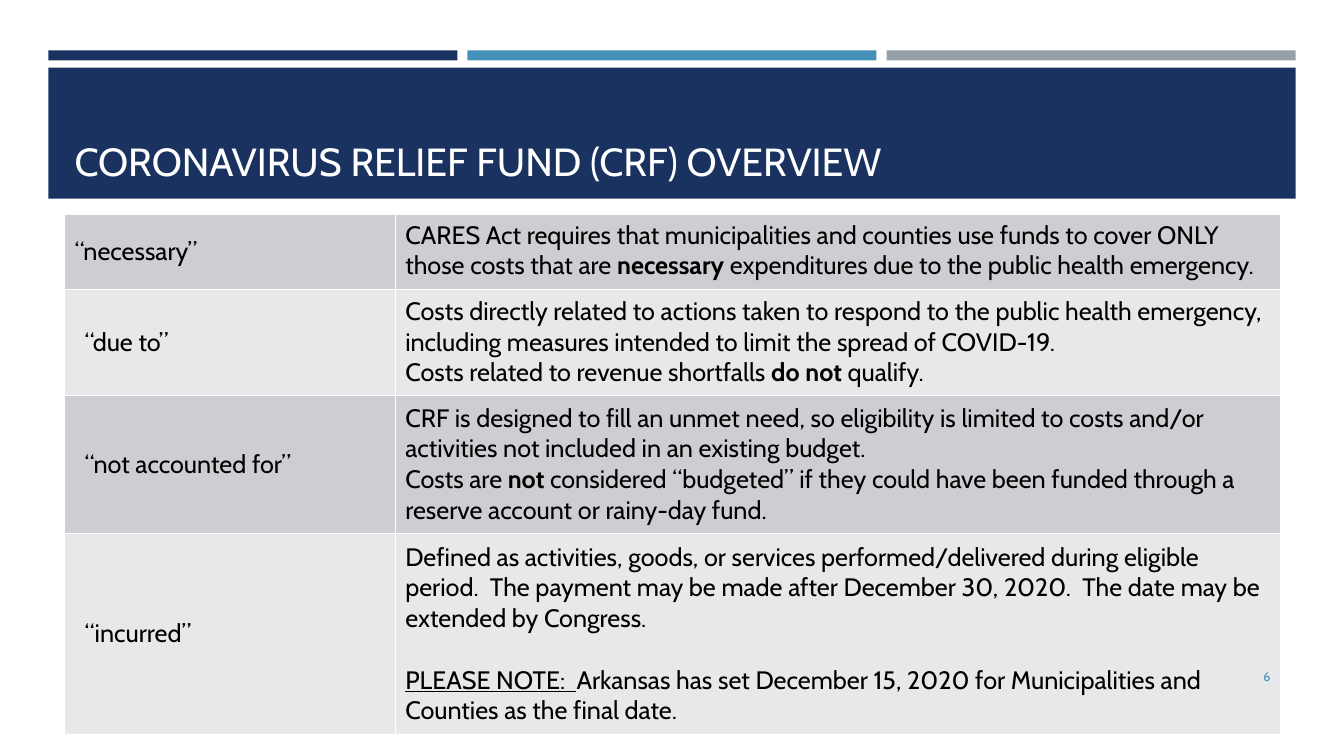
from lxml.etree import SubElement
from pptx import Presentation
from pptx.dml.color import RGBColor
from pptx.enum.shapes import MSO_SHAPE as Shape
from pptx.enum.text import MSO_ANCHOR as Anchor, MSO_AUTO_SIZE as AutoSize, PP_ALIGN as Align
from pptx.oxml.ns import qn
from pptx.util import Inches, Pt

COLORS = {"navy": "1A3260", "blue": "4590B8", "gray": "969FA7", "white": "FFFFFF",
          "black": "000000", "dark_band": "CDCED2", "light_band": "E8E8EA"}
FONT = "Cabin"
TITLE = "CORONAVIRUS RELIEF FUND (CRF) OVERVIEW"
COLUMNS = [3.28, 8.78]
ROWS = [0.74, 1.05, 1.37, 2]
TERMS = [
    ("“necessary”", [
        [("CARES Act requires that municipalities and counties use funds to cover ONLY "
          "those costs that are ", ""), ("necessary", "bold"),
         (" expenditures due to the public health emergency.", "")]]),
    ("“due to”", [
        [("Costs directly related to actions taken to respond to the public health emergency, "
          "including measures intended to limit the spread of COVID-19.", "")],
        [("Costs related to revenue shortfalls ", ""), ("do not ", "bold"), ("qualify.", "")]]),
    ("“not accounted for”", [
        [("CRF is designed to fill an unmet need, so eligibility is limited to costs and/or "
          "activities not included in an existing budget.", "")],
        [("Costs are ", ""), ("not", "bold"),
         (" considered “budgeted” if they could have been funded through a reserve account "
          "or rainy-day fund.", "")]]),
    ("“incurred”", [
        [("Defined as activities, goods, or services performed/delivered during eligible period.  "
          "The payment may be made after December 30, 2020.  The date may be extended by "
          "Congress.", "")],
        [("PLEASE NOTE:  ", "underline"),
         ("Arkansas has set December 15, 2020 for Municipalities and Counties as the final "
          "date.", "")]]),
]


def color(name):
    """Return the named colour."""
    return RGBColor.from_string(COLORS[name])


def write(frame, paragraphs, size=18, fill="black", align=Align.LEFT, gap=0):
    """Write paragraphs of (text, style) spans, with a gap in points between them."""
    frame.word_wrap = True
    for index, spans in enumerate(paragraphs):
        para = frame.add_paragraph() if index else frame.paragraphs[0]
        para.alignment = align
        para.space_before = Pt(gap if index else 0)
        for text, style in spans:
            span = para.add_run()
            span.text = text
            font = span.font
            font.name, font.size = FONT, Pt(size)
            font.bold, font.underline = style == "bold", style == "underline"
            font.color.rgb = color(fill)


def add_bar(page, box, fill):
    """Add a plain filled rectangle."""
    bar = page.shapes.add_shape(Shape.RECTANGLE, *map(Inches, box))
    bar.shadow.inherit = False
    bar.fill.solid()
    bar.fill.fore_color.rgb = color(fill)
    bar.line.fill.background()


def add_header(page, box):
    """Place three accent bars, the banner and the title in the box."""
    left, top, width, height = box
    gap, bar_height, banner_top = 0.1, 0.1, 0.17
    bar_width = (width - 2 * gap) / 3
    for index, fill in enumerate(("navy", "blue", "gray")):
        add_bar(page, (left + index * (bar_width + gap), top, bar_width, bar_height), fill)
    add_bar(page, (left, top + banner_top, width, height - banner_top), "navy")
    title = page.shapes.title
    page.shapes.element.append(title.element)
    title.left, title.top = Inches(left + 0.16), Inches(top + 0.27)
    title.width, title.height = Inches(width - 0.31), Inches(1.11)
    frame = title.text_frame
    frame.auto_size = AutoSize.NONE
    frame.vertical_anchor = Anchor.BOTTOM
    write(frame, [[(TITLE, "")]], size=28, fill="white")


def format_cell(cell, fill):
    """Give a cell white borders and a solid fill."""
    properties = cell._tc.get_or_add_tcPr()
    for side in ("lnL", "lnR", "lnT", "lnB"):
        line = SubElement(properties, qn(f"a:{side}"), w=str(Pt(1)))
        solid = SubElement(line, qn("a:solidFill"))
        SubElement(solid, qn("a:srgbClr"), val=COLORS["white"])
    cell.fill.solid()
    cell.fill.fore_color.rgb = color(fill)


def add_terms(page, left, top):
    """Place the table of terms and their meanings."""
    table = page.shapes.add_table(len(ROWS), len(COLUMNS), Inches(left), Inches(top),
                                  Inches(sum(COLUMNS)), Inches(sum(ROWS))).table
    table.first_row = table.horz_banding = False
    for column, width in zip(table.columns, COLUMNS):
        column.width = Inches(width)
    for index, (term, meaning) in enumerate(TERMS):
        table.rows[index].height = Inches(ROWS[index])
        term_cell, meaning_cell = table.rows[index].cells
        for cell in (term_cell, meaning_cell):
            format_cell(cell, "light_band" if index % 2 else "dark_band")
            cell.vertical_anchor = Anchor.MIDDLE
        if index:
            term_cell.margin_left = Inches(0.2)
        else:
            meaning_cell.vertical_anchor = Anchor.TOP
        write(term_cell.text_frame, [[(term, "")]])
        write(meaning_cell.text_frame, meaning, gap=22 if term == "“incurred”" else 0)


def add_page_number(page, box, number):
    """Place the page number at the right of the box."""
    frame = page.shapes.add_textbox(*map(Inches, box)).text_frame
    frame.vertical_anchor = Anchor.MIDDLE
    write(frame, [[(number, "")]], size=9, fill="blue", align=Align.RIGHT)


def main():
    """Build the slide and save the deck."""
    deck = Presentation()
    deck.slide_width, deck.slide_height = Inches(13.33), Inches(7.5)
    page = deck.slides.add_slide(deck.slide_layouts[5])
    add_header(page, (0.48, 0.5, 12.37, 1.47))
    add_terms(page, 0.64, 2.13)
    add_page_number(page, (11.55, 6.51, 1.15, 0.4), "6")
    deck.save("out.pptx")


if __name__ == "__main__":
    main()
